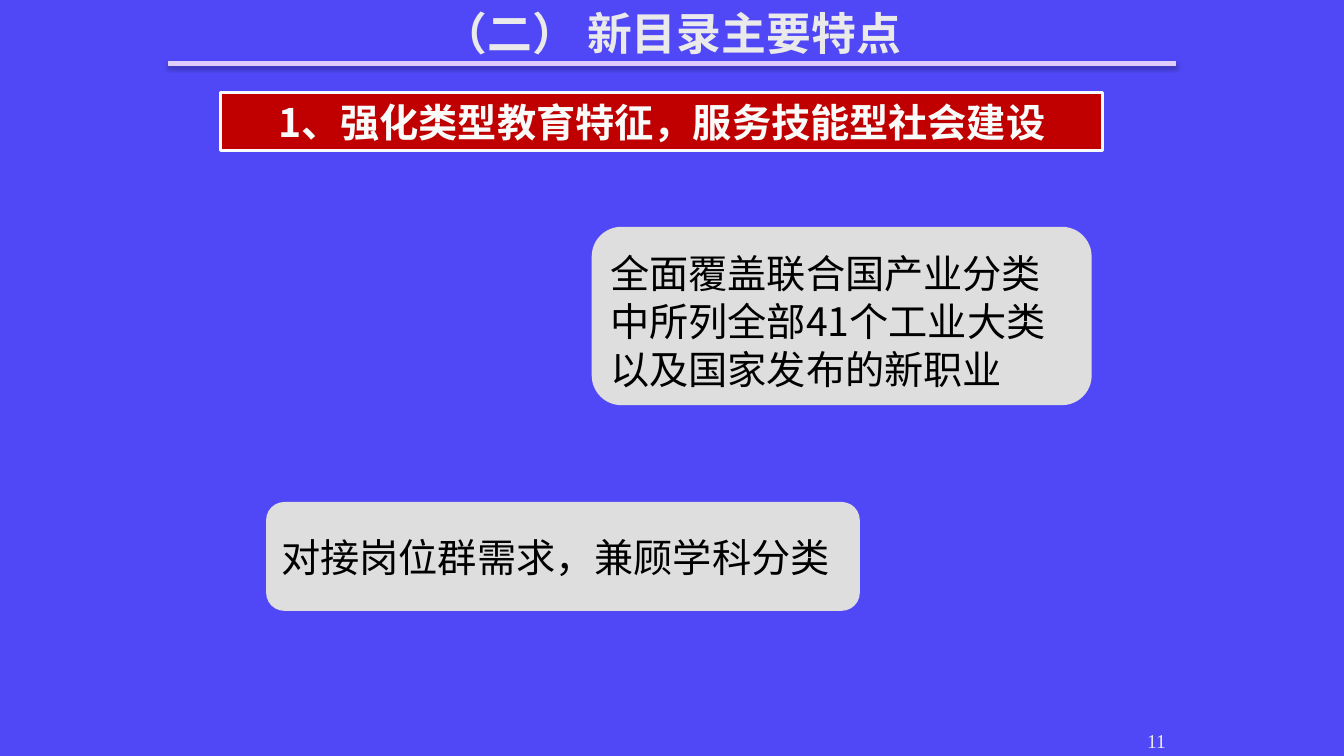
from dataclasses import dataclass
from typing import Optional

from lxml.etree import SubElement
from pptx import Presentation
from pptx.dml.color import RGBColor
from pptx.enum.shapes import MSO_CONNECTOR, MSO_SHAPE
from pptx.enum.text import MSO_ANCHOR, PP_ALIGN
from pptx.oxml.ns import qn
from pptx.util import Inches, Pt


@dataclass(frozen=True)
class Theme:
    background: str = "5048F6"
    light: str = "EAEAEA"
    rule: str = "E0CCFF"
    banner: str = "C00000"
    banner_text: str = "F9FBFA"
    card: str = "DEDEDE"
    ink: str = "000000"
    cjk: str = "Noto Sans CJK SC"
    serif: str = "Times New Roman"
    title_size: int = 32
    body_size: int = 28
    number_size: int = 14
    body_pitch: int = 34


@dataclass(frozen=True)
class Box:
    """Place and extent in columns and rows of the grid."""
    col: float
    row: float
    cols: float
    rows: float


@dataclass(frozen=True)
class Panel:
    box: Box
    preset: MSO_SHAPE
    fill: str
    lines: tuple[str, ...]
    color: str
    bold: bool = False
    align: PP_ALIGN = PP_ALIGN.LEFT
    border: Optional[str] = None
    pitch: Optional[int] = None
    top: float = 0.05


T = Theme()
COLS, ROWS = 80, 45
W, H = Inches(13.33), Inches(7.5)


def x(cols: float) -> int:
    return round(W * cols / COLS)


def y(rows: float) -> int:
    return round(H * rows / ROWS)


def place(box: Box) -> tuple[int, int, int, int]:
    return x(box.col), y(box.row), x(box.cols), y(box.rows)


def rgb(color: str) -> RGBColor:
    return RGBColor.from_string(color)


def write(s, *lines: str, size: int, color: str, font: str = T.cjk,
          bold: bool = False, align: PP_ALIGN = PP_ALIGN.LEFT,
          anchor: MSO_ANCHOR = MSO_ANCHOR.MIDDLE, pitch: Optional[int] = None,
          top: float = 0.05, bottom: float = 0.05) -> None:
    tf = s.text_frame
    tf.word_wrap = True
    tf.vertical_anchor = anchor
    tf.margin_top, tf.margin_bottom = Inches(top), Inches(bottom)
    for i, line in enumerate(lines):
        p = tf.paragraphs[0] if i == 0 else tf.add_paragraph()
        p.alignment = align
        if pitch:
            p.line_spacing = Pt(pitch)
        r = p.add_run()
        r.text = line
        r.font.size, r.font.bold, r.font.name = Pt(size), bold, font
        r.font.color.rgb = rgb(color)
        SubElement(r.font._element, qn("a:ea")).set("typeface", font)


def add_panel(slide, panel: Panel) -> None:
    s = slide.shapes.add_shape(panel.preset, *place(panel.box))
    s.shadow.inherit = False
    s.fill.solid()
    s.fill.fore_color.rgb = rgb(panel.fill)
    if panel.border:
        s.line.color.rgb = rgb(panel.border)
        s.line.width = Pt(2)
    else:
        s.line.fill.background()
    write(s, *panel.lines, size=T.body_size, color=panel.color, bold=panel.bold,
          align=panel.align, pitch=panel.pitch, top=panel.top)


def add_rule(slide, left: float, right: float, row: float) -> None:
    s = slide.shapes.add_connector(MSO_CONNECTOR.STRAIGHT, x(left), y(row), x(right), y(row))
    s.line.color.rgb = rgb(T.rule)
    s.line.width = Pt(3)
    effects = SubElement(s._element.spPr, qn("a:effectLst"))
    shadow = SubElement(effects, qn("a:outerShdw"), blurRad=str(Pt(3.1)),
                        dist=str(Pt(1.8)), dir="5400000", rotWithShape="0")
    tint = SubElement(shadow, qn("a:srgbClr"), val=T.ink)
    SubElement(tint, qn("a:alpha"), val="35000")


PANELS = (
    Panel(Box(13.14, 5.52, 52.5, 3.42), MSO_SHAPE.RECTANGLE, T.banner,
          ("1、强化类型教育特征，服务技能型社会建设",), T.banner_text,
          bold=True, align=PP_ALIGN.CENTER, border=T.banner_text),
    Panel(Box(35.22, 13.5, 29.76, 10.62), MSO_SHAPE.ROUNDED_RECTANGLE, T.card,
          ("全面覆盖联合国产业分类", "中所列全部41个工业大类", "以及国家发布的新职业"),
          T.ink, pitch=T.body_pitch, top=0.14),
    Panel(Box(15.84, 29.88, 35.34, 6.48), MSO_SHAPE.ROUNDED_RECTANGLE, T.card,
          ("对接岗位群需求，兼顾学科分类",), T.ink),
)


def main() -> None:
    prs = Presentation()
    prs.slide_width, prs.slide_height = W, H
    slide = prs.slides.add_slide(prs.slide_layouts[6])
    slide.background.fill.solid()
    slide.background.fill.fore_color.rgb = rgb(T.background)

    # Title and the rule below it
    title = slide.shapes.add_textbox(*place(Box(10, -1.08, 60, 6)))
    write(title, "（二） 新目录主要特点", size=T.title_size, color=T.light,
          bold=True, align=PP_ALIGN.CENTER)
    add_rule(slide, 10, 70, 3.78)

    # Slide number
    number = slide.shapes.add_textbox(*place(Box(57.5, 42.36, 12.5, 3)))
    write(number, "11", size=T.number_size, color=T.light, font=T.serif,
          align=PP_ALIGN.RIGHT, anchor=MSO_ANCHOR.BOTTOM, bottom=0.09)

    # Banner and cards
    for panel in PANELS:
        add_panel(slide, panel)

    prs.save("out.pptx")


if __name__ == "__main__":
    main()
